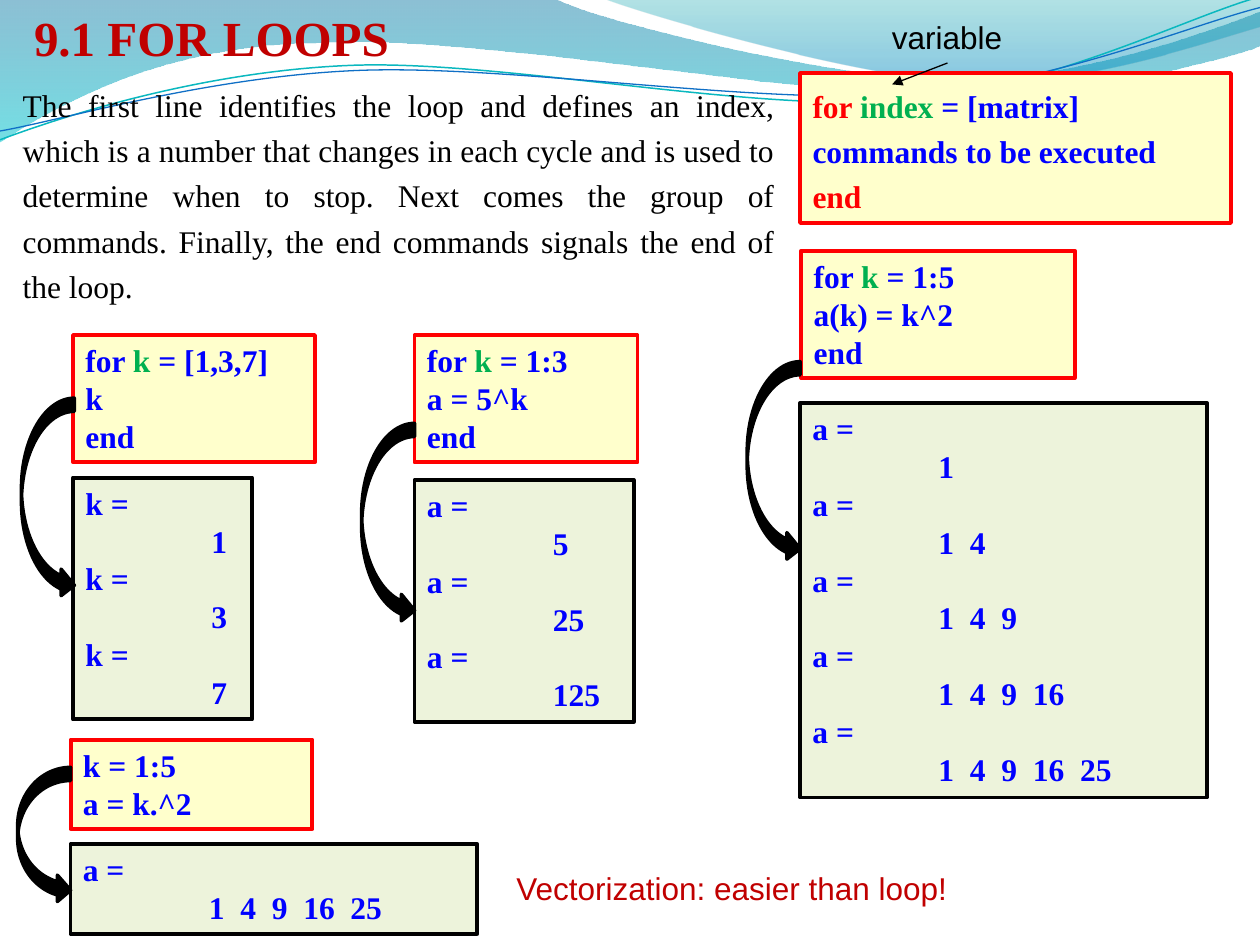
from dataclasses import dataclass

from lxml.etree import SubElement
from pptx import Presentation
from pptx.dml.color import RGBColor
from pptx.enum.shapes import MSO_CONNECTOR as CONN, MSO_SHAPE as SHAPE
from pptx.enum.text import MSO_ANCHOR as ANCHOR, MSO_AUTO_SIZE as AUTO, PP_ALIGN as ALIGN
from pptx.oxml.ns import qn
from pptx.util import Inches, Pt

BLACK, RED, DARK_RED = "000000", "FF0000", "C00000"
BLUE, GREEN = "0000FF", "00B050"
CODE_FILL, OUTPUT_FILL = "FFFFCC", "EDF3DB"
SERIF, SANS = "Times New Roman", "Arial"

Box = tuple[float, float, float, float]
Point = tuple[float, float]
Line = list[tuple[str, str]]  # (text, colour) runs


@dataclass
class Example:
    code_box: Box
    code: list[Line]
    output_box: Box
    variable: str
    results: list[str]
    arrow_box: Box


@dataclass
class Wave:
    start: Point
    steps: list[tuple[Point, ...]]  # one point is a straight line, three a curve
    stops: tuple[tuple[float, str, int], ...] = ()  # position, colour, opacity %
    line: tuple[str, float] | None = None


WAVES = [
    Wave((0, -0.01),
         [((4.4, -0.01),),
          ((4.76, 0.17), (6.64, 0.63), (7.58, 0.63)),
          ((8.53, 0.63), (9.58, 0.26), (10, 0.09)),
          ((10.01, 0.36),),
          ((9.83, 0.44), (8.7, 0.76), (7.46, 0.75)),
          ((6.22, 0.75), (3.82, 0.28), (2.57, 0.34)),
          ((1.29, 0.35), (0.46, 0.83), (-0.01, 1.13))],
         stops=((0, "0074A1", 45), (1, "00C6CF", 55))),
    Wave((4.79, -0.01),
         [((5.09, 0.11), (6.82, 0.62), (7.69, 0.65)),
          ((8.56, 0.69), (9.61, 0.32), (10, 0.21)),
          ((10, 0),)],
         stops=((0, "00A1A9", 30), (0.8, "008BBF", 45))),
    Wave((0, 1.11),
         [((0.48, 0.93), (1.58, 0.57), (2.77, 0.52)),
          ((3.95, 0.47), (5.93, 0.89), (7.13, 0.8)),
          ((8.33, 0.71), (9.38, 0.15), (9.98, -0.02))], line=("0AB8BF", 0.85)),
    Wave((0, 1.04),
         [((0.47, 0.96), (1.64, 0.61), (2.83, 0.56)),
          ((4.03, 0.51), (5.97, 0.83), (7.17, 0.75)),
          ((8.36, 0.67), (9.41, 0.21), (10, 0.06))], line=("0F6FC6", 0.75)),
]


def for_line(values: str) -> Line:
    return [("for ", BLUE), ("k", GREEN), (f" = {values}", BLUE)]


END: Line = [("end", BLUE)]
EXAMPLES = [
    Example((0.58, 2.66, 1.92, 1.01), [for_line("[1,3,7]"), [("k", BLUE)], END],
            (0.58, 3.79, 1.42, 1.92), "k", ["1", "3", "7"], (0.17, 3.16, 0.42, 1.59)),
    Example((3.29, 2.66, 1.77, 1.01), [for_line("1:3"), [("a = 5^k", BLUE)], END],
            (3.29, 3.81, 1.74, 1.92), "a", ["5", "25", "125"], (2.87, 3.36, 0.42, 1.59)),
    Example((6.36, 1.99, 2.17, 1.01), [for_line("1:5"), [("a(k) = k^2", BLUE)], END],
            (6.35, 3.2, 3.23, 3.13), "a",
            ["1", "1  4", "1  4  9", "1  4  9  16", "1  4  9  16  25"],
            (5.93, 2.87, 0.42, 1.59)),
    Example((0.56, 5.87, 1.92, 0.71), [[("k = 1:5", BLUE)], [("a = k.^2", BLUE)]],
            (0.56, 6.7, 3.23, 0.71), "a", ["1  4  9  16  25"], (0.14, 6.09, 0.42, 1.08)),
]


def rgb(color: str) -> RGBColor:
    return RGBColor.from_string(color)


def place(sp, box: Box) -> None:
    sp.left, sp.top, sp.width, sp.height = map(Inches, box)


def style(font, color: str, name: str = SERIF, size: float = 18, bold: bool = False) -> None:
    font.name, font.size, font.bold = name, Pt(size), bold
    font.color.rgb = rgb(color)


def bend(sp, steps: list[tuple[Point, ...]]) -> None:
    """Join each three segments that stand for a curve into one cubic curve."""
    segments = iter(list(sp._element.iter(qn("a:lnTo"))))
    for step in steps:
        first, *others = [next(segments) for _ in step]
        if others:
            first.tag = qn("a:cubicBezTo")
        for segment in others:
            first.append(segment[0])
            segment.getparent().remove(segment)


def add_wave(shapes, wave: Wave) -> None:
    points = [wave.start, *(point for step in wave.steps for point in step)]
    emu = [(Inches(x), Inches(y)) for x, y in points]
    builder = shapes.build_freeform(*emu[0])
    builder.add_line_segments(emu[1:], close=bool(wave.stops))
    sp = builder.convert_to_shape()
    bend(sp, wave.steps)
    sp.shadow.inherit = False
    if wave.line:
        sp.fill.background()
        sp.line.color.rgb, sp.line.width = rgb(wave.line[0]), Pt(wave.line[1])
        return
    sp.line.fill.background()
    sp.fill.gradient()
    sp.fill.gradient_angle = 270
    for stop, (position, color, _) in zip(sp.fill.gradient_stops, wave.stops):
        stop.position, stop.color.rgb = position, rgb(color)
    for clr, (_, _, opacity) in zip(sp._element.spPr.iter(qn("a:srgbClr")), wave.stops):
        SubElement(clr, qn("a:alpha"), val=str(opacity * 1000))


def add_solid(shapes, kind, box: Box, fill: str, line: str, width: float):
    sp = shapes.add_shape(kind, *map(Inches, box))
    sp.shadow.inherit = False
    sp.fill.solid()
    sp.fill.fore_color.rgb = rgb(fill)
    sp.line.color.rgb, sp.line.width = rgb(line), Pt(width)
    return sp


def add_code(shapes, box: Box, lines: list[Line], fill: str, line: str,
             spacing: float = 1) -> None:
    sp = add_solid(shapes, SHAPE.RECTANGLE, box, fill, line, 2.25)
    tf = sp.text_frame
    tf.word_wrap, tf.vertical_anchor = True, ANCHOR.TOP
    for i, runs in enumerate(lines):
        p = tf.add_paragraph() if i else tf.paragraphs[0]
        p.alignment, p.line_spacing = ALIGN.JUSTIFY, spacing
        p._p.get_or_add_pPr().set("defTabSz", str(Inches(1)))
        for text, color in runs:
            r = p.add_run()
            r.text = text
            style(r.font, color, bold=True)


def add_example(shapes, ex: Example) -> None:
    output = [[(text, BLUE)] for result in ex.results
              for text in (f"{ex.variable} =", f"\t{result}")]
    add_code(shapes, ex.code_box, ex.code, CODE_FILL, RED)
    add_code(shapes, ex.output_box, output, OUTPUT_FILL, BLACK)
    add_solid(shapes, SHAPE.CURVED_RIGHT_ARROW, ex.arrow_box, BLACK, BLACK, 2)


def add_label(shapes, box: Box, text: str, color: str) -> None:
    tf = shapes.add_textbox(*map(Inches, box)).text_frame
    tf.word_wrap = False
    tf.text = text
    style(tf.paragraphs[0].runs[0].font, color, SANS)


def fill_placeholder(sp, box: Box, text: str, align):
    place(sp, box)
    tf = sp.text_frame
    tf.text = text
    tf.auto_size, tf.vertical_anchor, tf.word_wrap = AUTO.NONE, ANCHOR.TOP, True
    p = tf.paragraphs[0]
    p.alignment, p.space_before = align, Pt(0)
    return p


def add_pointer(shapes, start: Point, end: Point) -> None:
    line = shapes.add_connector(CONN.STRAIGHT, *map(Inches, start + end))
    line.line.color.rgb, line.line.width = rgb(BLACK), Pt(0.75)
    SubElement(line.line._get_or_add_ln(), qn("a:tailEnd"), type="triangle")
    SubElement(line._element.spPr, qn("a:effectLst"))


def main() -> None:
    prs = Presentation()
    prs.slide_width, prs.slide_height = Inches(10), Inches(7.5)
    slide = prs.slides.add_slide(prs.slide_layouts[1])
    shapes = slide.shapes
    title, body = shapes.title, slide.placeholders[1]

    for wave in WAVES:
        add_wave(shapes, wave)
    for sp in (body, title):  # bring the text in front of the waves
        shapes._spTree.append(sp._element)

    p = fill_placeholder(body, (0.08, 0.57, 6.17, 1.92),
                         "The first line identifies the loop and defines an index, which is a "
                         "number that changes in each cycle and is used to determine when to "
                         "stop. Next comes the group of commands. Finally, the end commands "
                         "signals the end of the loop.", ALIGN.JUSTIFY)
    p.line_spacing = 1.2
    pPr = p._p.get_or_add_pPr()
    pPr.set("marL", "0")
    pPr.set("indent", "0")
    SubElement(pPr, qn("a:buNone"))
    style(p.runs[0].font, BLACK)
    p = fill_placeholder(title, (0.17, 0.01, 3.62, 0.57), "9.1 FOR LOOPS", ALIGN.LEFT)
    style(p.runs[0].font, DARK_RED, size=28, bold=True)

    syntax = [[("for ", RED), ("index", GREEN), (" = [matrix]", BLUE)],
              [("commands to be executed", BLUE)], [("end", RED)]]
    add_code(shapes, (6.35, 0.58, 3.42, 1.19), syntax, CODE_FILL, RED, 1.2)
    for ex in EXAMPLES:
        add_example(shapes, ex)
    add_label(shapes, (4, 6.85, 3.65, 0.4), "Vectorization: easier than loop!", DARK_RED)
    add_label(shapes, (6.98, 0.09, 1.09, 0.4), "variable", BLACK)
    add_pointer(shapes, (7.52, 0.5), (7.08, 0.67))
    prs.save("out.pptx")


if __name__ == "__main__":
    main()
